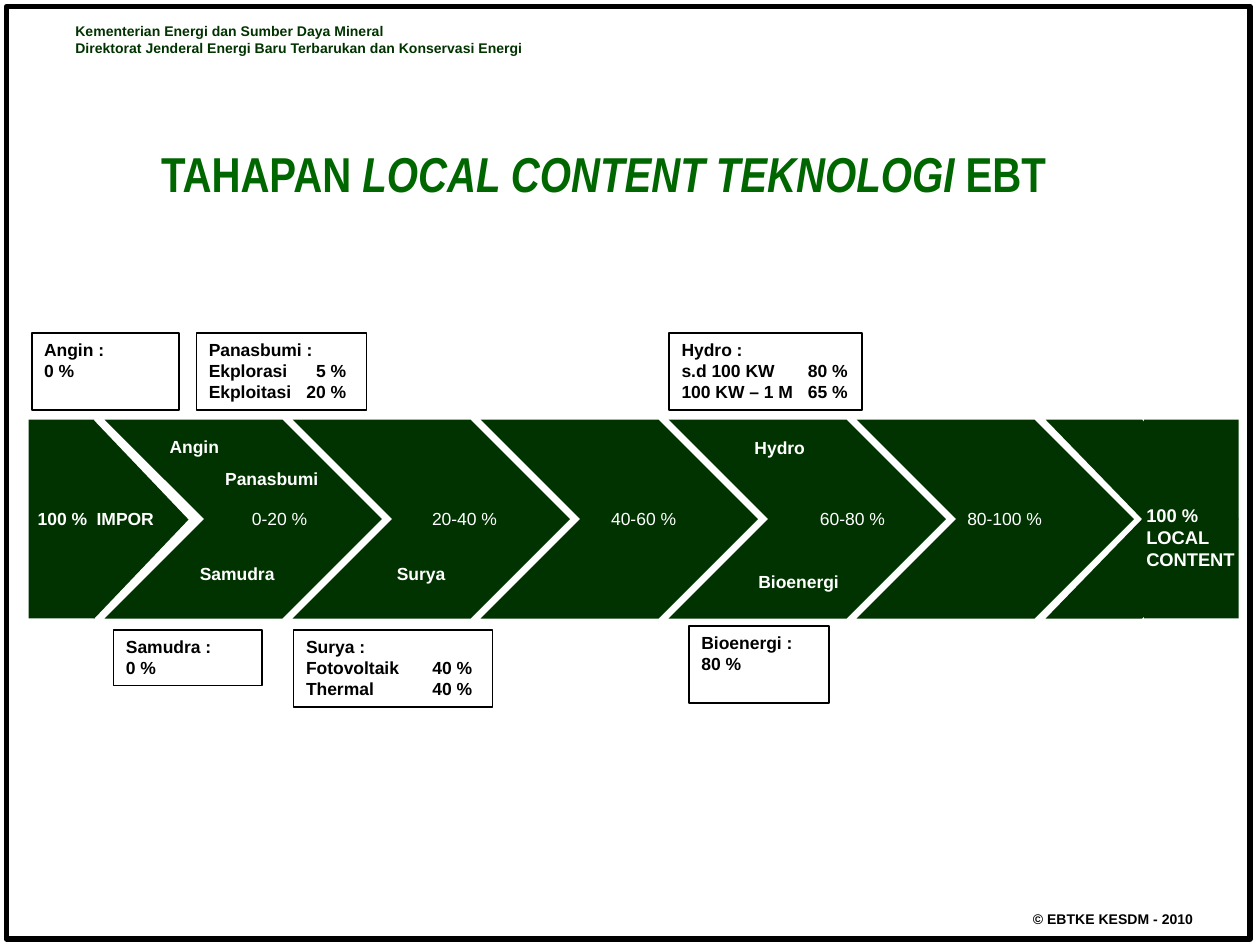
from dataclasses import dataclass

from lxml import etree
from pptx import Presentation
from pptx.dml.color import RGBColor
from pptx.enum import shapes, text
from pptx.oxml.ns import qn
from pptx.util import Cm, Pt


@dataclass(frozen=True)
class Theme:
    font: str = "Arial"
    title_font: str = "Arial Narrow"
    dark: str = "003300"
    green: str = "006600"
    black: str = "000000"
    white: str = "FFFFFF"
    small: float = 8
    body: float = 10
    goal: float = 10.5
    title: float = 28


T = Theme()

HEADER = [
    "Kementerian Energi dan Sumber Daya Mineral",
    "Direktorat Jenderal Energi Baru Terbarukan dan Konservasi Energi",
]
FOOTER = ["© EBTKE KESDM - 2010"]
TITLE = [("TAHAPAN ", False), ("LOCAL CONTENT TEKNOLOGI ", True), ("EBT", False)]
START = ["100 %\tIMPOR"]
GOAL = ["100 %", "LOCAL", "CONTENT"]

STAGES = [
    ("0-20 %", 4.83),
    ("20-40 %", 8.46),
    ("40-60 %", 12.07),
    ("60-80 %", 16.28),
    ("80-100 %", 19.25),
]
SOURCES = [
    ("Panasbumi", 4.29, 9.32),
    ("Hydro", 14.96, 8.69),
    ("Bioenergi", 15.04, 11.38),
    ("Angin", 3.17, 8.66),
    ("Surya", 7.75, 11.23),
    ("Samudra", 3.78, 11.23),
]
SHARES = [
    (["Hydro :", "s.d 100 KW\t80 %", "100 KW – 1 M\t65 %"], (13.49, 6.71, 3.89, 1.55), 3.35),
    (["Surya :", "Fotovoltaik\t40 %", "Thermal\t40 %"], (5.92, 12.7, 4.01, 1.55), 3.35),
    (["Panasbumi :", "Ekplorasi\t5 %", "Ekploitasi\t20 %"], (3.96, 6.71, 3.43, 1.55), 2.77),
    (["Samudra :", "0 %"], (2.29, 12.7, 3, 1.12), None),
    (["Angin :", "0 %"], (0.64, 6.71, 2.97, 1.55), None),
    (["Bioenergi :", "80 %"], (13.89, 12.62, 2.82, 1.55), None),
]

BAND_TOP, BAND_H = 8.46, 4.01
FIRST, PITCH, CHEVRON_W = 2.11, 3.79, 5.59
LABEL_TOP, LABEL_H = 10.11, 0.69

S = shapes.MSO_SHAPE
LEFT, CENTER = text.PP_ALIGN.LEFT, text.PP_ALIGN.CENTER


def rgb(value):
    return RGBColor.from_string(value)


def style(font, size, color, bold=True, name=T.font):
    font.name, font.size, font.bold = name, Pt(size), bold
    font.color.rgb = rgb(color)


def add_tab(p, position, align):
    tabs = etree.SubElement(p._p.get_or_add_pPr(), qn("a:tabLst"))
    etree.SubElement(tabs, qn("a:tab"), pos=str(Cm(position)), algn=align)


def write(sp, lines, size, color, bold=True, align=LEFT, tab=None, tab_align="r"):
    tf = sp.text_frame
    tf.word_wrap = True
    tf.vertical_anchor = text.MSO_ANCHOR.TOP
    tf.text = "\n".join(lines)
    for p in tf.paragraphs:
        p.alignment = align
        if tab and "\t" in p.text:
            add_tab(p, tab, tab_align)
        for r in p.runs:
            style(r.font, size, color, bold)


def add_label(s, box, lines, size, color, **options):
    write(s.shapes.add_textbox(*map(Cm, box)), lines, size, color, **options)


def add_block(s, kind, box, fill=None, line_width=None):
    sp = s.shapes.add_shape(kind, *map(Cm, box))
    sp.shadow.inherit = False
    if fill:
        sp.fill.solid()
        sp.fill.fore_color.rgb = rgb(fill)
    else:
        sp.fill.background()
    if line_width:
        sp.line.color.rgb = rgb(T.black)
        sp.line.width = Pt(line_width)
    else:
        sp.line.fill.background()
    return sp


def add_title(s):
    tf = s.shapes.add_textbox(Cm(2.74), Cm(2.77), Cm(18.85), Cm(1.45)).text_frame
    tf.word_wrap = True
    p = tf.paragraphs[0]
    p.alignment = CENTER
    for words, italic in TITLE:
        r = p.add_run()
        r.text = words
        style(r.font, T.title, T.green, name=T.title_font)
        r.font.italic = italic


def add_band(s):
    for i in range(len(STAGES)):
        add_block(s, S.CHEVRON, (FIRST + i * PITCH, BAND_TOP, CHEVRON_W, BAND_H), T.dark)
    add_block(s, S.CHEVRON, (21.08, BAND_TOP, 3.89, BAND_H), T.dark)
    add_block(s, S.RECTANGLE, (23.06, BAND_TOP, 1.91, BAND_H), T.dark)
    add_block(s, S.RECTANGLE, (0.58, BAND_TOP, 1.32, BAND_H), T.dark)
    tip = add_block(s, S.ISOSCELES_TRIANGLE, (0.84, 9.52, BAND_H, 1.91), T.dark)
    tip.rotation = 90


def main():
    prs = Presentation()
    prs.slide_width, prs.slide_height = Cm(25.4), Cm(19.05)
    s = prs.slides.add_slide(prs.slide_layouts[6])

    add_block(s, S.RECTANGLE, (0.13, 0.13, 25.07, 18.8), line_width=3)
    add_label(s, (1.27, 0.33, 17.78, 0.94), HEADER, T.small, T.dark)
    add_label(s, (20.32, 18.24, 4.24, 0.61), FOOTER, T.small, T.black, align=CENTER)
    add_title(s)
    add_band(s)

    for name, left in STAGES:
        add_label(s, (left, LABEL_TOP, 2.77, LABEL_H), [name], T.body, T.white, bold=False)
    for name, left, top in SOURCES:
        add_label(s, (left, top, 3, LABEL_H), [name], T.body, T.white)
    for lines, box, tab in SHARES:
        sp = add_block(s, S.RECTANGLE, box, line_width=1)
        write(sp, lines, T.body, T.black, tab=tab)

    add_label(s, (0.51, LABEL_TOP, 3, LABEL_H), START, T.body, T.white, tab=1.19, tab_align="l")
    add_label(s, (22.86, 10.03, 2.4, 1.6), GOAL, T.goal, T.white)
    prs.save("out.pptx")


if __name__ == "__main__":
    main()
